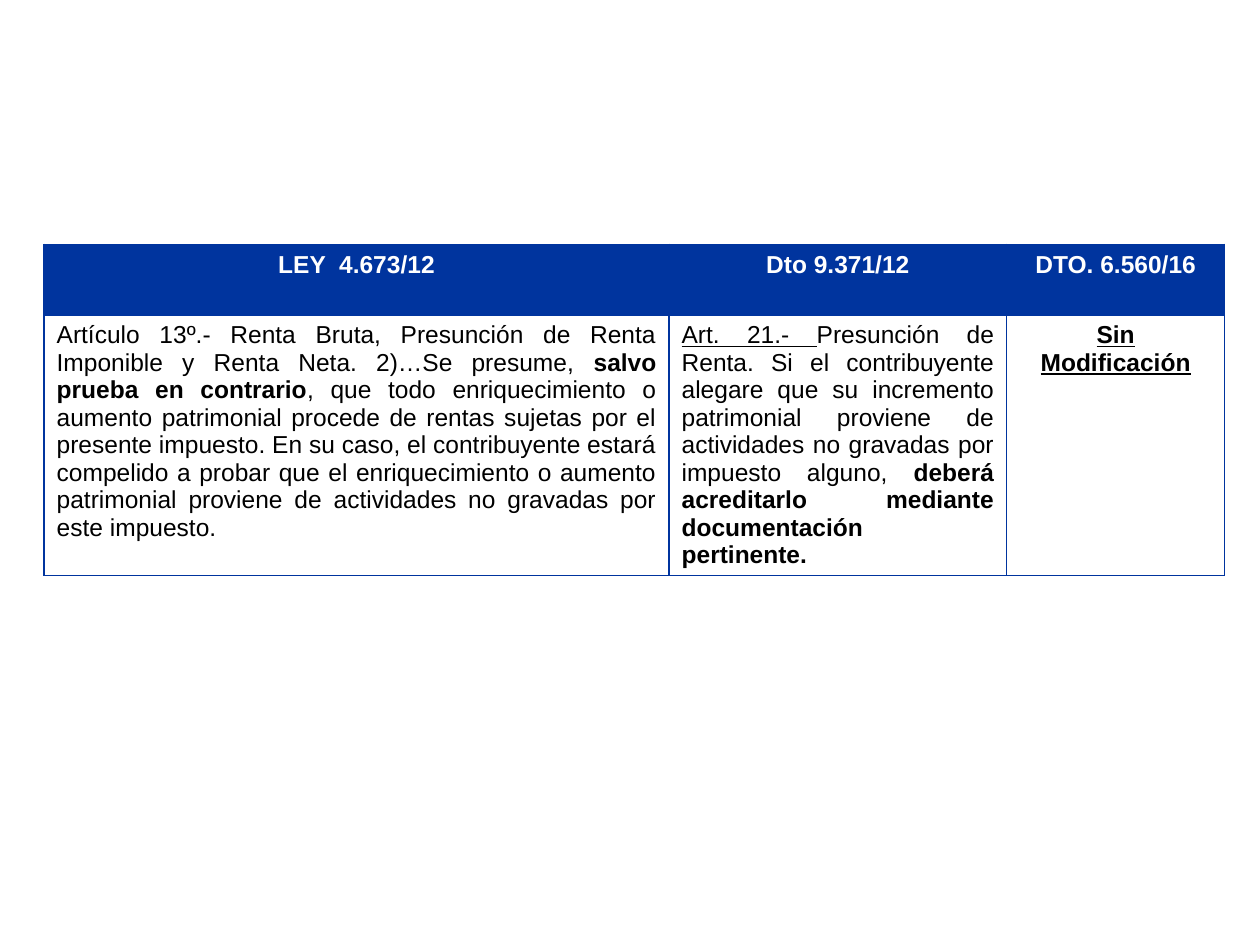
import pptx
import pptx.dml.color
import pptx.enum.text
import pptx.oxml
import pptx.oxml.ns
import pptx.util

COLORS = {"blue": "00349E", "white": "FFFFFF", "black": "000000"}
FONT, SIZE = "Arial", 14
LEFT, TOP = 0.35, 1.94
COLS = [4.96, 2.68, 1.73]
ROWS = [0.56, 2.06]

# Each cell: alignment, then runs of (text, style); b = bold, u = underlined
CELLS = [
    [
        ("CENTER", [("LEY  4.673/12", "b")]),
        ("CENTER", [("Dto 9.371/12", "b")]),
        ("CENTER", [("DTO. 6.560/16", "b")]),
    ],
    [
        ("JUSTIFY", [
            ("Artículo 13º.- Renta Bruta, Presunción de Renta Imponible y "
             "Renta Neta. 2)…Se presume, ", ""),
            ("salvo prueba en contrario", "b"),
            (", que todo enriquecimiento o aumento patrimonial procede de "
             "rentas sujetas por el presente impuesto. En su caso, el "
             "contribuyente estará compelido a probar que el enriquecimiento "
             "o aumento patrimonial proviene de actividades no gravadas por "
             "este impuesto.", ""),
        ]),
        ("JUSTIFY", [
            ("Art. 21.- ", "u"),
            ("Presunción de Renta. Si el contribuyente alegare que su "
             "incremento patrimonial proviene de actividades no gravadas por "
             "impuesto alguno, ", ""),
            ("deberá acreditarlo mediante documentación pertinente.", "b"),
        ]),
        ("CENTER", [("Sin Modificación", "bu")]),
    ],
]


def rgb(name):
    return pptx.dml.color.RGBColor.from_string(COLORS[name])


def add_borders(cell):
    """Draw a 1 pt blue line on every side; lines precede the fill."""
    tcPr = cell._tc.get_or_add_tcPr()
    for i, side in enumerate(("lnL", "lnR", "lnT", "lnB")):
        tcPr.insert(i, pptx.oxml.parse_xml(
            f'<a:{side} {pptx.oxml.ns.nsdecls("a")} w="{pptx.util.Pt(1)}">'
            f'<a:solidFill><a:srgbClr val="{COLORS["blue"]}"/></a:solidFill>'
            f'</a:{side}>'))


def fill_cell(cell, align, runs, fill, color):
    cell.fill.solid()
    cell.fill.fore_color.rgb = rgb(fill)
    add_borders(cell)
    p = cell.text_frame.paragraphs[0]
    p.alignment = getattr(pptx.enum.text.PP_ALIGN, align)
    for text, style in runs:
        r = p.add_run()
        r.text = text
        r.font.name = FONT
        r.font.size = pptx.util.Pt(SIZE)
        r.font.bold = "b" in style
        r.font.underline = "u" in style
        r.font.color.rgb = rgb(color)


def main():
    prs = pptx.Presentation()
    prs.slide_width = pptx.util.Inches(10)
    prs.slide_height = pptx.util.Inches(7.5)
    s = prs.slides.add_slide(prs.slide_layouts[6])

    # Comparison table
    box = [pptx.util.Inches(v) for v in (LEFT, TOP, sum(COLS), sum(ROWS))]
    table = s.shapes.add_table(len(ROWS), len(COLS), *box).table
    for col, width in zip(table.columns, COLS):
        col.width = pptx.util.Inches(width)
    for row, height in zip(table.rows, ROWS):
        row.height = pptx.util.Inches(height)

    # Blue header row, white body row
    schemes = [("blue", "white"), ("white", "black")]
    for row, content, (fill, color) in zip(table.rows, CELLS, schemes):
        for cell, (align, runs) in zip(row.cells, content):
            fill_cell(cell, align, runs, fill, color)

    prs.save("out.pptx")


if __name__ == "__main__":
    main()
